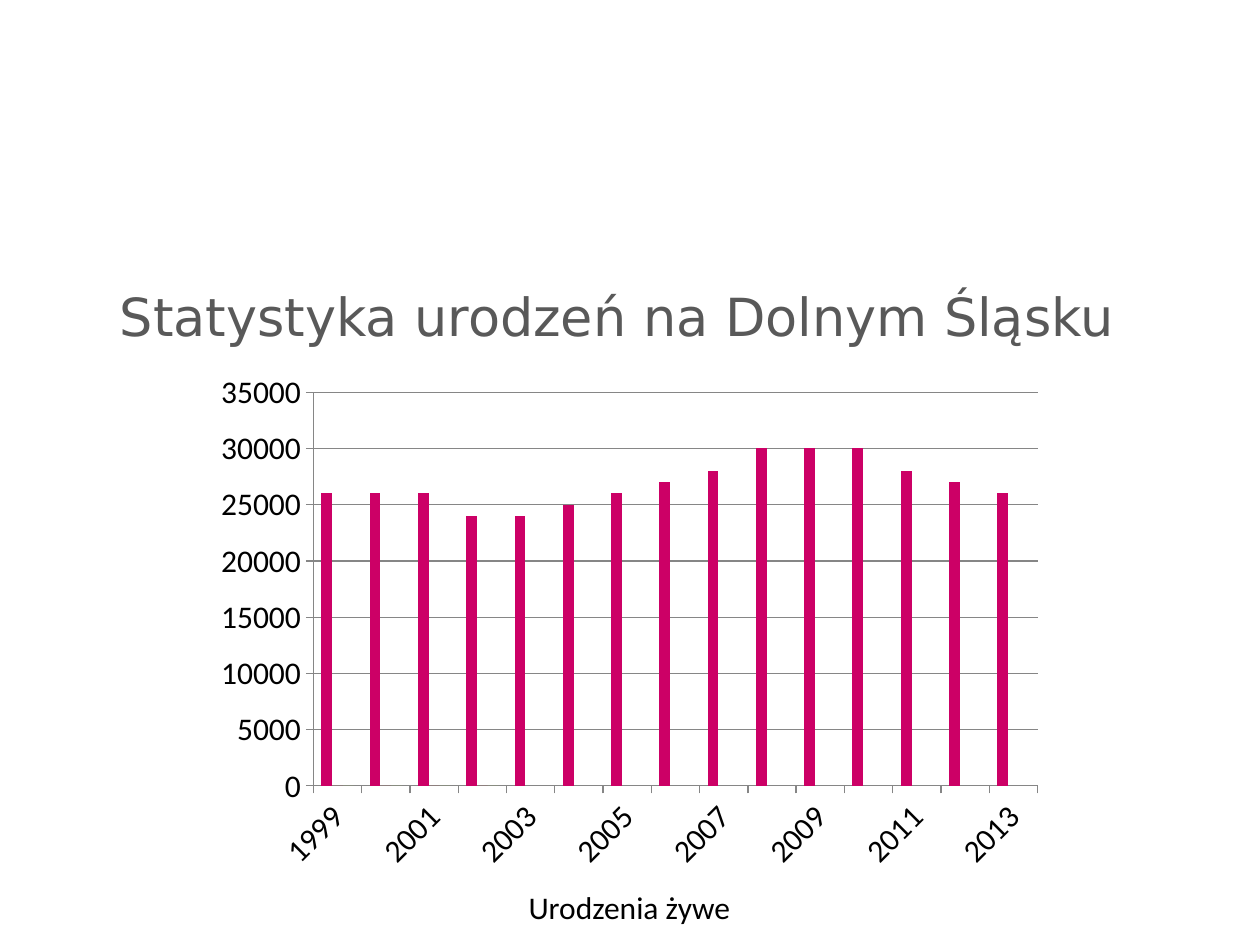
from pptx import Presentation, util as u
from pptx.chart.data import CategoryChartData
from pptx.dml.color import RGBColor
from pptx.enum import chart as ch, text

TITLE = "Statystyka urodzeń na Dolnym Śląsku"
CAPTION = "Urodzenia żywe"
YEARS = [str(year) for year in range(1999, 2014)]
BIRTHS = [26000, 26000, 26000, 24000, 24000, 25000, 26000, 27000,
          28000, 30000, 30000, 30000, 28000, 27000, 26000]
ZEROS = [0] * 4 + [None] * 11
SERIES = [("Series 1", BIRTHS, "CC0066"),
          ("Series 2", ZEROS, "C0504D"),
          ("Series 3", ZEROS, "9BBB59")]
GREY = "868686"


def rgb(value):
    return RGBColor.from_string(value)


def set_font(font, name, size, color):
    for key, value in {"name": name, "size": u.Pt(size)}.items():
        setattr(font, key, value)
    font.color.rgb = rgb(color)


def set_line(line):
    line.color.rgb = rgb(GREY)
    line.width = u.Pt(0.75)


def add_label(slide, box, words, font):
    tf = slide.shapes.add_textbox(*map(u.Inches, box)).text_frame
    tf.word_wrap = True
    tf.vertical_anchor = text.MSO_ANCHOR.MIDDLE
    p = tf.paragraphs[0]
    p.alignment = text.PP_ALIGN.CENTER
    r = p.add_run()
    r.text = words
    set_font(r.font, *font)


def add_births_chart(slide, box):
    data = CategoryChartData()
    data.categories = YEARS
    for name, values, _ in SERIES:
        data.add_series(name, values)
    chart = slide.shapes.add_chart(
        ch.XL_CHART_TYPE.COLUMN_CLUSTERED, *map(u.Inches, box), data).chart
    chart.has_legend = chart.has_title = False
    set_font(chart.font, "Calibri", 18, "000000")

    plot = chart.plots[0]
    plot.vary_by_categories = False
    plot.gap_width, plot.overlap = 150, 0
    for series, (_, _, color) in zip(plot.series, SERIES):
        series.format.fill.solid()
        series.format.fill.fore_color.rgb = rgb(color)

    for axis in (chart.category_axis, chart.value_axis):
        axis.major_tick_mark = ch.XL_TICK_MARK.OUTSIDE
        set_line(axis.format.line)
    axis = chart.value_axis
    axis.minimum_scale, axis.maximum_scale, axis.major_unit = 0, 35000, 5000
    axis.has_major_gridlines = True
    set_line(axis.major_gridlines.format.line)

    # Slanted year labels
    labels = chart.category_axis.tick_labels
    set_font(labels.font, "Calibri", 18, "000000")
    body = chart.category_axis._element.txPr.bodyPr
    body.set("rot", "-2700000")
    body.set("vert", "horz")


prs = Presentation()
prs.slide_width, prs.slide_height = u.Inches(10), u.Inches(7.5)
s = prs.slides.add_slide(prs.slide_layouts[6])
add_label(s, (0.4, 1.88, 9, 1.25), TITLE, ("DejaVu Sans", 30, "595959"))
add_births_chart(s, (1.62, 2.88, 6.75, 4.11))
add_label(s, (3.45, 7, 3.09, 0.4), CAPTION, ("Calibri", 18, "000000"))
prs.save("out.pptx")
